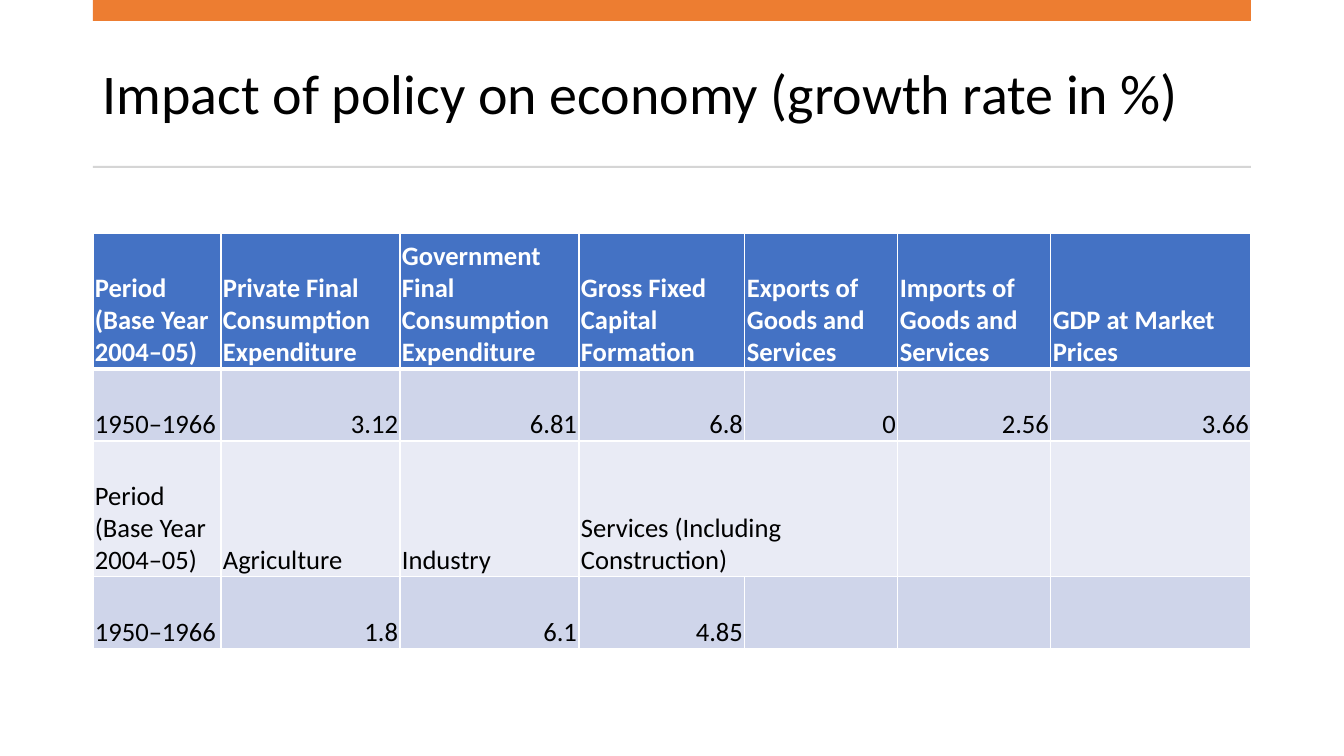
from collections import namedtuple

from lxml.etree import SubElement
from pptx import Presentation
from pptx.dml.color import RGBColor
from pptx.enum.shapes import MSO_SHAPE
from pptx.enum.text import MSO_ANCHOR, PP_ALIGN
from pptx.oxml.ns import qn
from pptx.util import Pt

EMU_PER_PX = 914400 / 100.8
FONT = "Calibri"
COLORS = {
    "accent": "ED7D31",
    "rule": "D5D5D5",
    "header": "4472C4",
    "band_dark": "CFD5EA",
    "band_light": "E9EBF5",
    "white": "FFFFFF",
    "text": "000000",
}
Box = namedtuple("Box", "left top width height")

COLUMN_WIDTHS = [128, 179, 179, 166, 153, 153, 200]
ROW_HEIGHTS = [136, 72, 136, 72]
ROWS = [
    [
        "Period (Base Year 2004–05)",
        "Private Final Consumption Expenditure",
        "Government Final Consumption Expenditure",
        "Gross Fixed Capital Formation",
        "Exports of Goods and Services",
        "Imports of Goods and Services",
        "GDP at Market Prices",
    ],
    ["1950–1966", "3.12", "6.81", "6.8", "0", "2.56", "3.66"],
    ["Period (Base Year 2004–05)", "Agriculture", "Industry",
     "Services (Including Construction)", "", "", ""],
    ["1950–1966", "1.8", "6.1", "4.85", "", "", ""],
]
ROW_FILLS = ["header", "band_dark", "band_light", "band_dark"]


def px(length):
    return round(length * EMU_PER_PX)


def color(name):
    return RGBColor.from_string(COLORS[name])


def add_span(para, text, size, color_name, bold=False):
    span = para.add_run()
    span.text = text
    span.font.name = FONT
    span.font.size = Pt(size)
    span.font.bold = bold
    span.font.color.rgb = color(color_name)


def add_bar(page, box, color_name):
    bar = page.shapes.add_shape(MSO_SHAPE.RECTANGLE, *map(px, box))
    bar.shadow.inherit = False
    bar.fill.solid()
    bar.fill.fore_color.rgb = color(color_name)
    bar.line.fill.background()


def add_heading(page, box):
    add_bar(page, Box(box.left, box.top, box.width, 21), "accent")
    title_box = Box(box.left, box.top + 37, box.width, 119)
    frame = page.shapes.add_textbox(*map(px, title_box)).text_frame
    frame.word_wrap = True
    frame.vertical_anchor = MSO_ANCHOR.MIDDLE
    para = frame.paragraphs[0]
    para.line_spacing = 0.9
    add_span(para, "Impact of policy on economy (growth rate in %)", 40, "text")
    add_bar(page, Box(box.left, box.top + box.height - 2, box.width, 2), "rule")


def set_borders(cell, top, bottom):
    properties = cell._tc.get_or_add_tcPr()
    for side, width in (("L", 1), ("R", 1), ("T", top), ("B", bottom)):
        line = SubElement(properties, qn(f"a:ln{side}"), w=str(Pt(width)))
        fill = SubElement(line, qn("a:solidFill"))
        SubElement(fill, qn("a:srgbClr"), val=COLORS["white"])


def fill_cell(cell, text, row):
    set_borders(cell, 3 if row == 1 else 1, 3 if row == 0 else 1)
    cell.fill.solid()
    cell.fill.fore_color.rgb = color(ROW_FILLS[row])
    if not text:
        return
    cell.vertical_anchor = MSO_ANCHOR.BOTTOM
    cell.margin_left = cell.margin_right = cell.margin_top = px(2)
    cell.margin_bottom = 0
    para = cell.text_frame.paragraphs[0]
    if text.replace(".", "").isdigit():
        para.alignment = PP_ALIGN.RIGHT
    is_header = row == 0
    add_span(para, text, 19, "white" if is_header else "text", is_header)


def add_growth_table(page, box):
    frame = page.shapes.add_table(len(ROWS), len(COLUMN_WIDTHS), *map(px, box))
    table = frame.table
    for column, width in zip(table.columns, COLUMN_WIDTHS):
        column.width = px(width)
    for table_row, height in zip(table.rows, ROW_HEIGHTS):
        table_row.height = px(height)
    for row, texts in enumerate(ROWS):
        for column, text in enumerate(texts):
            fill_cell(table.cell(row, column), text, row)
    table.cell(2, 3).merge(table.cell(2, 4))


def main():
    deck = Presentation()
    deck.slide_width = px(1344)
    deck.slide_height = px(756)
    page = deck.slides.add_slide(deck.slide_layouts[6])
    add_heading(page, Box(93, 0, 1158, 168))
    add_growth_table(page, Box(93, 233, sum(COLUMN_WIDTHS), sum(ROW_HEIGHTS)))
    deck.save("out.pptx")


if __name__ == "__main__":
    main()
